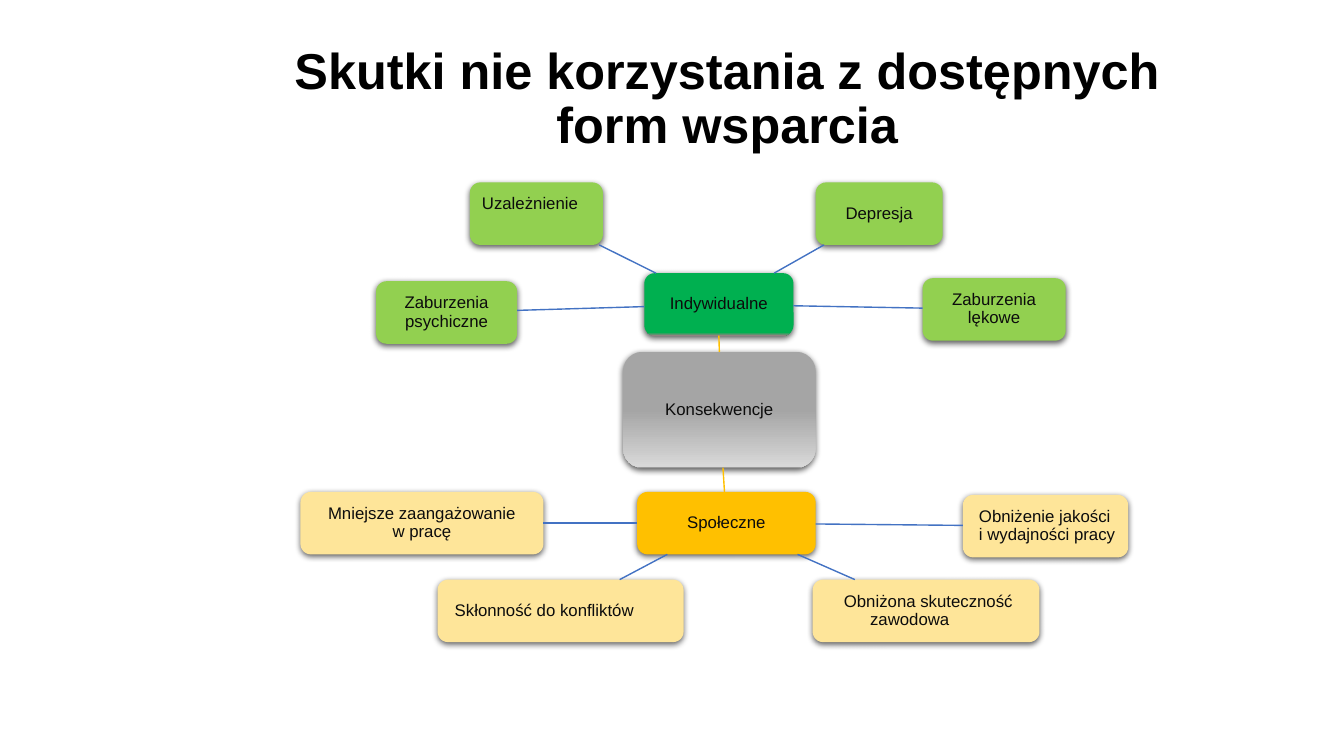
from lxml import etree
from pptx import Presentation
from pptx import util as u
from pptx.dml.color import RGBColor
from pptx.enum import shapes, text
from pptx.oxml import parse_xml
from pptx.oxml.ns import nsdecls, qn

THEME = {
    "font": "Arial", "title": 36, "body": 12, "ink": "0C0C0C", "black": "000000",
    "blue": "4372C3", "gold": "FFC000", "leaf": "92D050", "cream": "FEE599",
    "grey": [(0, "A5A5A5"), (50, "A5A5A5"), (99, "D8D8D8"), (100, "919191")],
    "green": [(0, "00B050"), (95, "00B050"), (100, "968383")],
}

TITLE = ["Skutki nie korzystania z dostępnych", "form wsparcia"]
HIGH = 0.62
PAD = (0.09, 0.09, 0.09, 0.09)

NODES = {
    "core": (["Konsekwencje"], 6.18, 3.49, 1.91, 1.15, "grey"),
    "self": (["Indywidualne"], 6.39, 2.71, 1.48, HIGH, "green"),
    "mind": (["Zaburzenia psychiczne"], 3.73, 2.79, 1.4, HIGH, "leaf"),
    "habit": (["Uzależnienie"], 4.66, 1.81, 1.32, HIGH, "leaf"),
    "mood": (["Depresja"], 8.09, 1.81, 1.26, HIGH, "leaf"),
    "fear": (["Zaburzenia lękowe"], 9.15, 2.76, 1.42, HIGH, "leaf"),
    "group": (["Społeczne"], 6.32, 4.88, 1.77, HIGH, "gold"),
    "yield": (["Obniżenie jakości", "i wydajności pracy"], 9.55, 4.91, 1.64, HIGH, "cream"),
    "skill": (["Obniżona skuteczność zawodowa"], 8.06, 5.75, 2.25, HIGH, "cream"),
    "clash": (["Skłonność do konfliktów"], 4.34, 5.75, 2.44, HIGH, "cream"),
    "drive": (["Mniejsze zaangażowanie", "w pracę"], 2.98, 4.88, 2.41, HIGH, "cream"),
}

LEFT = {
    "habit": (0.09, 0.06, 0.06, 0.25),
    "yield": (0.13, 0.05, 0.05, 0.05),
    "skill": (0.28, 0.06, 0.06, 0.06),
    "clash": (0.14, 0.06, 0.06, 0.06),
}
HANG = {"skill": 0.26}

LINKS = [
    ("core", "self", "gold"), ("core", "group", "gold"),
    ("self", "mind", "blue"), ("self", "habit", "blue"),
    ("self", "mood", "blue"), ("self", "fear", "blue"),
    ("group", "yield", "blue"), ("group", "skill", "blue"),
    ("group", "clash", "blue"), ("group", "drive", "blue"),
]


def write(shape, lines, size, ink, pad, left=False):
    frame = shape.text_frame
    frame.word_wrap = True
    frame.vertical_anchor = text.MSO_ANCHOR.MIDDLE
    (frame.margin_left, frame.margin_top,
     frame.margin_right, frame.margin_bottom) = map(u.Inches, pad)
    para = frame.paragraphs[0]
    for row, line in enumerate(lines):
        if row:
            para.add_line_break()
        para.add_run().text = line
    para.alignment = text.PP_ALIGN.LEFT if left else text.PP_ALIGN.CENTER
    para.line_spacing = 0.9
    para.font.name = THEME["font"]
    para.font.size = u.Pt(size)
    para.font.color.rgb = RGBColor.from_string(THEME[ink])
    return para


def paint(shape, tone):
    if isinstance(tone, str):
        shape.fill.solid()
        shape.fill.fore_color.rgb = RGBColor.from_string(tone)
        return
    shape.fill.gradient()
    shape.fill.gradient_angle = 270
    stops = next(shape.element.spPr.iter(qn("a:gsLst")))
    for stop in list(stops):
        stops.remove(stop)
    for place, hue in tone:
        stop = etree.SubElement(stops, qn("a:gs"), pos=str(place * 1000))
        etree.SubElement(stop, qn("a:srgbClr"), val=hue)


def shade(shape):
    shape.shadow.inherit = False
    glow = shape.element.spPr.find(qn("a:effectLst"))
    glow.append(parse_xml(
        f'<a:outerShdw {nsdecls("a")} blurRad="{u.Pt(4.5)}" dist="{u.Pt(1.5)}" '
        'dir="5400000" algn="ctr" rotWithShape="0"><a:srgbClr val="000000">'
        '<a:alpha val="63000"/></a:srgbClr></a:outerShdw>'))


def add_node(slide, name):
    lines, x, y, wide, high, tone = NODES[name]
    box = slide.shapes.add_shape(shapes.MSO_SHAPE.ROUNDED_RECTANGLE,
                                 *map(u.Inches, (x, y, wide, high)))
    paint(box, THEME[tone])
    box.line.fill.background()
    shade(box)
    para = write(box, lines, THEME["body"], "ink", LEFT.get(name, PAD), name in LEFT)
    if name in HANG:
        hang = u.Inches(HANG[name])
        props = para._p.get_or_add_pPr()
        props.set("marL", str(hang))
        props.set("indent", str(-hang))
    return box


def edge(name, goal):
    _, x, y, wide, high, _ = NODES[name]
    _, gx, gy, gw, gh, _ = NODES[goal]
    mx, my = x + wide / 2, y + high / 2
    dx, dy = gx + gw / 2 - mx, gy + gh / 2 - my
    part = 1 / max(abs(dx) / (wide / 2), abs(dy) / (high / 2))
    side = None
    if abs(dx) < 0.02:
        side = 2 if dy > 0 else 0
    elif abs(dy) < 0.02:
        side = 3 if dx > 0 else 1
    return u.Inches(mx + dx * part), u.Inches(my + dy * part), side


def add_link(slide, boxes, start, end, tone):
    ax, ay, out = edge(start, end)
    bx, by, into = edge(end, start)
    link = slide.shapes.add_connector(shapes.MSO_CONNECTOR.STRAIGHT, ax, ay, bx, by)
    if out is not None:
        link.begin_connect(boxes[start], out)
        link.end_connect(boxes[end], into)
    link.line.color.rgb = RGBColor.from_string(THEME[tone])
    link.line.width = u.Pt(1)
    etree.SubElement(link.element.spPr, qn("a:effectLst"))


def main():
    deck = Presentation()
    deck.slide_width, deck.slide_height = u.Inches(13.33), u.Inches(7.5)
    slide = deck.slides.add_slide(deck.slide_layouts[6])
    head = slide.shapes.add_textbox(*map(u.Inches, (1.26, 0.27, 12.07, 1.45)))
    write(head, TITLE, THEME["title"], "black", (0.1, 0.05, 0.26, 0.05)).font.bold = True
    boxes = {name: add_node(slide, name) for name in NODES}
    for start, end, tone in LINKS:
        add_link(slide, boxes, start, end, tone)
    deck.save("out.pptx")


if __name__ == "__main__":
    main()
